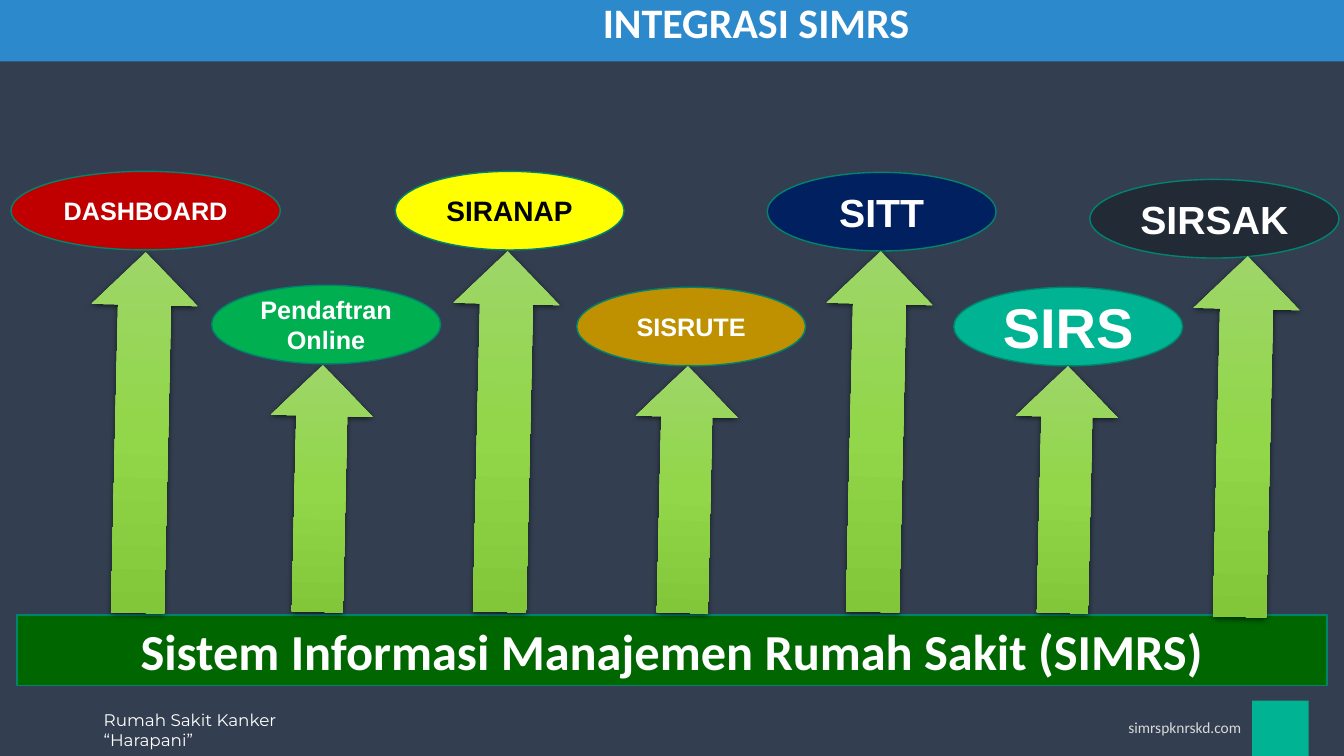
from copy import deepcopy
from lxml.etree import SubElement
from pptx import Presentation
from pptx.dml.color import RGBColor as RGB
from pptx.enum.shapes import MSO_SHAPE as Shape
from pptx.enum.text import MSO_ANCHOR as Anchor, MSO_AUTO_SIZE as Auto, PP_ALIGN as Align
from pptx.oxml.ns import qn
from pptx.util import Inches, Pt


def write(frame, text, size, face="Calibri", color="FFFFFF", bold=True, align=Align.CENTER):
    frame.word_wrap = True
    para = frame.paragraphs[0]
    para.text = text
    para.alignment = align
    look = {"size": Pt(size), "name": face, "bold": bold}
    for key, value in look.items():
        setattr(para.font, key, value)
    para.font.color.rgb = RGB.from_string(color)
    return para


def draw(kind, box, fill, line=None):
    shape = slide.shapes.add_shape(kind, *map(Inches, box))
    shape.shadow.inherit = False
    shape.fill.solid()
    shape.fill.fore_color.rgb = RGB.from_string(fill)
    if line:
        shape.line.color.rgb = RGB.from_string(line)
        shape.line.width = Pt(1)
    else:
        shape.line.fill.background()
    shape.text_frame.vertical_anchor = Anchor.MIDDLE
    return shape


deck = Presentation()
deck.slide_width, deck.slide_height = Inches(13.33), Inches(7.5)
slide = deck.slides.add_slide(deck.slide_layouts[5])
slide.background.fill.solid()
slide.background.fill.fore_color.rgb = RGB.from_string("333F50")

band = draw(Shape.RECTANGLE, (0, -0.14, 13.33, 0.75), "2C89CB")
title = slide.shapes.title
title.element.addprevious(band.element)
place = {"left": 1.67, "top": -0.08, "width": 11.66, "height": 0.61}
for key, value in place.items():
    setattr(title, key, Inches(value))
title.text_frame.auto_size = Auto.NONE
title.text_frame.vertical_anchor = Anchor.TOP
write(title.text_frame, "INTEGRASI SIMRS", 30)

draw(Shape.RECTANGLE, (12.42, 6.95, 0.56, 0.55), "00B393")
notes = [
    ((10.37, 7.11, 2.04, 0.23), "simrspknrskd.com", 11, "Calibri", "D9D9D9", Align.RIGHT),
    ((0.93, 6.99, 2.2, 0.5), "Rumah Sakit Kanker “Harapani”", 12, "Montserrat", "FFFFFF", Align.LEFT),
]
for box, text, size, face, color, align in notes:
    note = slide.shapes.add_textbox(*map(Inches, box))
    para = write(note.text_frame, text, size, face, color, False, align)
    if align == Align.RIGHT:
        para.line_spacing = 0.9
        note.text_frame.vertical_anchor = Anchor.MIDDLE

base = draw(Shape.RECTANGLE, (0.17, 6.1, 12.99, 0.7), "006600", "00846D")
write(base.text_frame, "Sistem Informasi Manajemen Rumah Sakit (SIMRS)", 36)

tall, short = (1.05, 3.58), (1.01, 2.45)
systems = [
    ("DASHBOARD", 18, "C00000", "FFFFFF", (0.11, 1.7, 2.67), (0.88, 2.5), tall),
    ("Pendaftran Online", 18, "00B050", "FFFFFF", (2.1, 2.83, 2.27), (2.67, 3.62), short),
    ("SIRANAP", 20, "FFFF00", "000000", (3.92, 1.7, 2.27), (4.47, 2.49), tall),
    ("SISRUTE", 18, "BF9000", "FFFFFF", (5.72, 2.85, 2.27), (6.29, 3.63), short),
    ("SITT", 28, "002060", "FFFFFF", (7.61, 1.71, 2.27), (8.17, 2.49), tall),
    ("SIRS", 40, "00B393", "FFFFFF", (9.46, 2.85, 2.27), (10.06, 3.63), short),
    ("SIRSAK", 28, "222A35", "FFFFFF", (10.81, 1.78, 2.47), (11.81, 2.54), tall),
]
for text, size, fill, color, spot, foot, span in systems:
    oval = draw(Shape.OVAL, (*spot, 0.78), fill, "00846D")
    write(oval.text_frame, text, size, "Arial", color)

    arrow = draw(Shape.UP_ARROW, foot + span, "92D64A")
    arrow.rotation = 1.3
    arrow.fill.gradient()
    arrow.fill.gradient_angle = 270
    props = arrow.element.spPr
    stops = props.find(qn("a:gradFill")).find(qn("a:gsLst"))
    stops.insert(1, deepcopy(stops[0]))
    for stop, tint, point in zip(arrow.fill.gradient_stops, ("9ED669", "92D64A", "82C63A"), (0, 0.5, 1)):
        stop.color.rgb = RGB.from_string(tint)
        stop.position = point
    shade = SubElement(props.find(qn("a:effectLst")), qn("a:outerShdw"),
                       blurRad=str(Pt(4.5)), dist=str(Pt(1.5)), dir="5400000", rotWithShape="0")
    ink = SubElement(shade, qn("a:srgbClr"), val="000000")
    SubElement(ink, qn("a:alpha"), val="63000")

deck.save("out.pptx")
